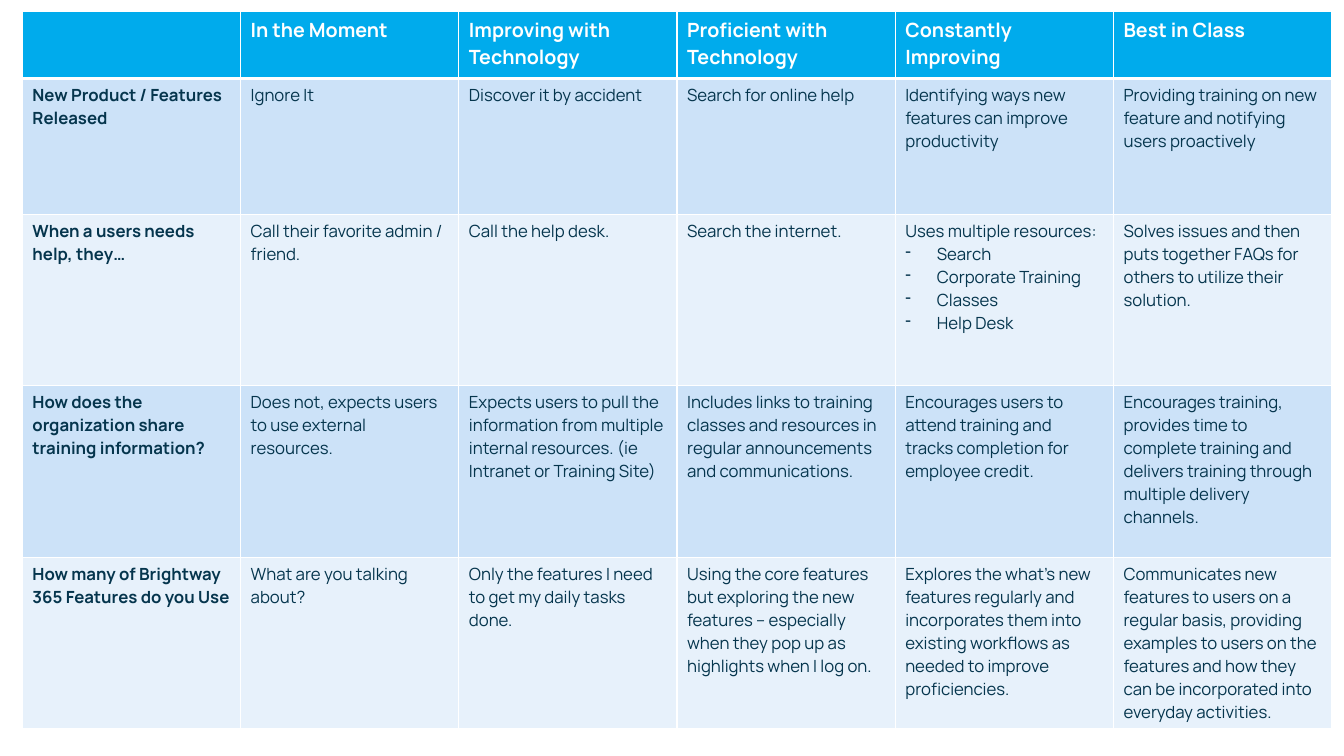
from lxml.etree import SubElement
from pptx import Presentation
from pptx.dml.color import RGBColor
from pptx.oxml.ns import qn
from pptx.util import Pt

FONT = "Manrope"
WHITE, NAVY, HEADER_BLUE = "FFFFFF", "05354D", "00ABEC"
BANDS = ["CCE2F8", "E7F1FB"]
COLUMN_WIDTH = 155.9
ROW_HEIGHTS = [48, 97, 122.6, 122.6, 122.6]
BULLET_INDENT = 22.5

HEADINGS = ["", "In the Moment", "Improving with Technology", "Proficient with Technology",
            "Constantly Improving", "Best in Class"]
ROWS = [
    ["New Product / Features Released",
     "Ignore It",
     "Discover it by accident",
     "Search for online help",
     "Identifying ways new features can improve productivity",
     "Providing training on new feature and notifying users proactively"],
    ["When a users needs help, they…",
     "Call their favorite admin / friend.",
     "Call the help desk.",
     "Search the internet.",
     ["Uses multiple resources:", "Search", "Corporate Training", "Classes", "Help Desk"],
     "Solves issues and then puts together FAQs for others to utilize their solution."],
    ["How does the organization share training information?",
     "Does not, expects users to use external resources.",
     "Expects users to pull the information from multiple internal resources. "
     "(ie Intranet or Training Site)",
     "Includes links to training classes and resources in regular announcements "
     "and communications.",
     "Encourages users to attend training and tracks completion for employee credit.",
     "Encourages training, provides time to complete training and delivers training "
     "through multiple delivery channels."],
    ["How many of Brightway 365 Features do you Use",
     "What are you talking about?",
     "Only the features I need to get my daily tasks done.",
     "Using the core features but exploring the new features – especially when they "
     "pop up as highlights when I log on.",
     "Explores the what's new features regularly and incorporates them into existing "
     "workflows as needed to improve proficiencies.",
     "Communicates new features to users on a regular basis, providing examples to users "
     "on the features and how they can be incorporated into everyday activities."],
]


def rgb(color):
    return RGBColor.from_string(color)


def set_borders(cell, top, bottom):
    tc_pr = cell._tc.get_or_add_tcPr()
    for side, width in (("L", 1), ("R", 1), ("T", top), ("B", bottom)):
        line = SubElement(tc_pr, qn(f"a:ln{side}"), w=str(Pt(width)))
        fill = SubElement(line, qn("a:solidFill"))
        SubElement(fill, qn("a:srgbClr"), val=WHITE)


def set_bullet(p):
    p_pr = p._p.get_or_add_pPr()
    p_pr.set("marL", str(Pt(BULLET_INDENT)))
    p_pr.set("indent", str(-Pt(BULLET_INDENT)))
    SubElement(p_pr, qn("a:buChar"), char="-")


def fill_cell(cell, content, fill, size, color, bold, top=1, bottom=1):
    set_borders(cell, top, bottom)
    cell.fill.solid()
    cell.fill.fore_color.rgb = rgb(fill)
    lines = content if isinstance(content, list) else [content]
    tf = cell.text_frame
    for i, line in enumerate(lines):
        p = tf.add_paragraph() if i else tf.paragraphs[0]
        p.text = line
        if i:
            set_bullet(p)
        p.font.name = FONT
        p.font.size = Pt(size)
        p.font.bold = bold
        p.font.color.rgb = rgb(color)


def add_maturity_table(slide):
    frame = slide.shapes.add_table(len(ROW_HEIGHTS), len(HEADINGS), Pt(16), Pt(8),
                                   Pt(COLUMN_WIDTH * len(HEADINGS)), Pt(sum(ROW_HEIGHTS)))
    table = frame.table
    for column in table.columns:
        column.width = Pt(COLUMN_WIDTH)
    for row, height in zip(table.rows, ROW_HEIGHTS):
        row.height = Pt(height)
    for c, heading in enumerate(HEADINGS):
        fill_cell(table.cell(0, c), heading, HEADER_BLUE, 14, WHITE, True, bottom=3)
    for r, row in enumerate(ROWS):
        for c, content in enumerate(row):
            fill_cell(table.cell(r + 1, c), content, BANDS[r % 2], 12, NAVY, c == 0,
                      top=1 if r else 3)


def main():
    prs = Presentation()
    prs.slide_width, prs.slide_height = Pt(960), Pt(540)
    slide = prs.slides.add_slide(prs.slide_layouts[6])
    add_maturity_table(slide)
    prs.save("out.pptx")


if __name__ == "__main__":
    main()
